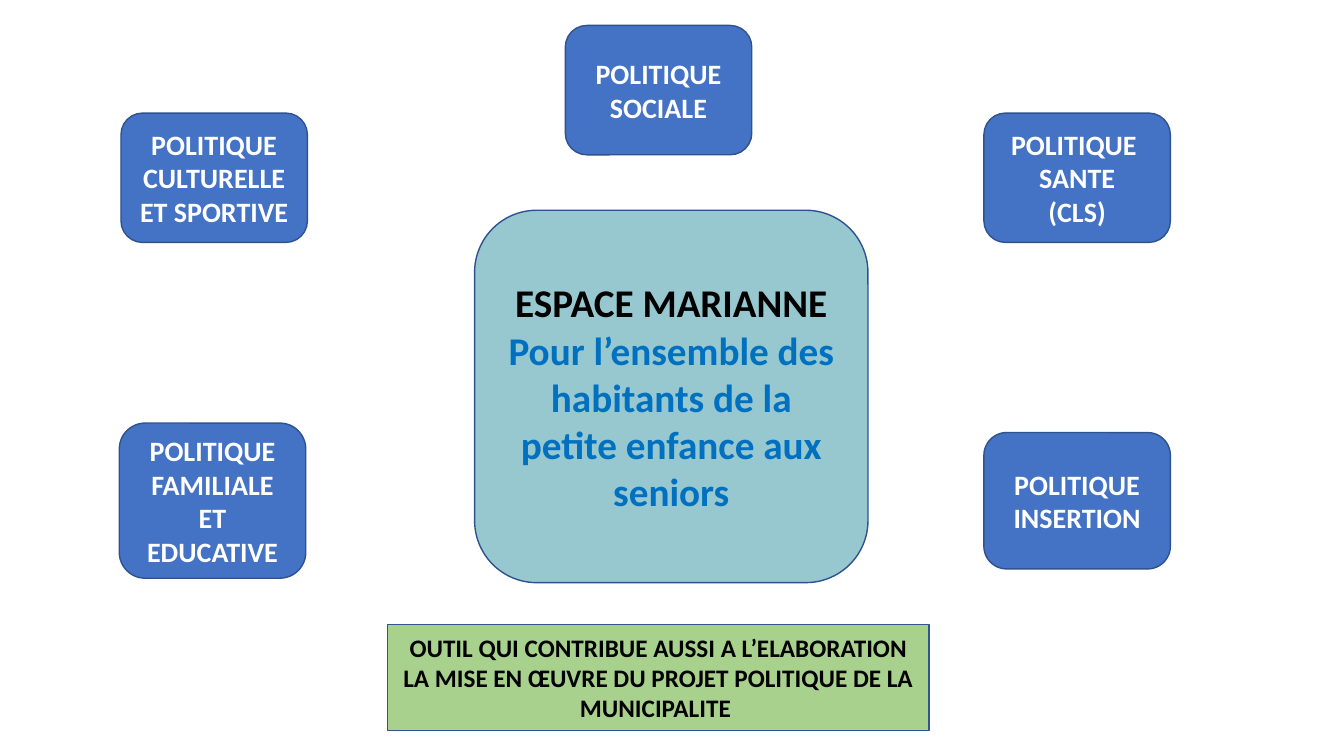
from dataclasses import dataclass

from pptx import Presentation
from pptx.dml.color import RGBColor
from pptx.enum.shapes import MSO_SHAPE
from pptx.enum.text import MSO_ANCHOR, PP_ALIGN
from pptx.shapes.autoshape import Shape
from pptx.slide import Slide
from pptx.util import Pt


@dataclass(frozen=True)
class Theme:
    font: str = "Calibri"
    blue: str = "4472C4"
    teal: str = "97C7CF"
    green: str = "A9D18E"
    edge: str = "2F528F"
    rim: str = "325491"
    white: str = "FFFFFF"
    black: str = "000000"
    accent: str = "0070C0"
    small: int = 18
    medium: int = 20
    large: int = 28


THEME = Theme()


@dataclass(frozen=True)
class Box:
    text: str
    left: float
    top: float
    width: float
    height: float
    fill: str = THEME.blue
    line: str = THEME.edge
    size: int = THEME.medium
    inks: tuple[str, ...] = (THEME.white,)  # per paragraph, last one repeats
    kind: MSO_SHAPE = MSO_SHAPE.ROUNDED_RECTANGLE


# Policy boxes: shared columns, width and usual height
WIDE, HIGH = 133.2, 92.4
LEFT, MID, RIGHT = 86.4, 403.8, 702.8
UPPER = 80.8

BOXES = (
    Box("POLITIQUE\nINSERTION", RIGHT, 309, WIDE, 97.4),
    Box("POLITIQUE\nCULTURELLE ET SPORTIVE", LEFT, UPPER, WIDE, HIGH),
    Box("POLITIQUE \nSANTE\n(CLS)", RIGHT, UPPER, WIDE, HIGH),
    Box("POLITIQUE FAMILIALE ET EDUCATIVE", 85.2, 302.2, WIDE, 110.8),
    Box("POLITIQUE\nSOCIALE", MID, 18.2, WIDE, HIGH),
    # Central hub
    Box("ESPACE MARIANNE\nPour l’ensemble des habitants de la petite enfance aux seniors",
        339, 150.2, 281, 266, fill=THEME.teal, size=THEME.large,
        inks=(THEME.black, THEME.accent)),
    # Bottom banner
    Box("OUTIL QUI CONTRIBUE AUSSI A L’ELABORATION LA MISE EN ŒUVRE "
        "DU PROJET POLITIQUE DE LA MUNICIPALITE ",
        276.8, 446.2, 386.8, 75.6, fill=THEME.green, line=THEME.rim,
        size=THEME.small, inks=(THEME.black,),
        kind=MSO_SHAPE.FLOWCHART_PROCESS),
)


def write(shape: Shape, box: Box) -> None:
    frame = shape.text_frame
    frame.word_wrap = True
    frame.vertical_anchor = MSO_ANCHOR.MIDDLE
    frame.text = box.text
    for pos, para in enumerate(frame.paragraphs):
        para.alignment = PP_ALIGN.CENTER
        ink = box.inks[min(pos, len(box.inks) - 1)]
        for run in para.runs:
            run.font.name = THEME.font
            run.font.size = Pt(box.size)
            run.font.bold = True
            run.font.color.rgb = RGBColor.from_string(ink)


def draw(slide: Slide, box: Box) -> None:
    shape = slide.shapes.add_shape(box.kind, Pt(box.left), Pt(box.top),
                                   Pt(box.width), Pt(box.height))
    shape.shadow.inherit = False
    shape.fill.solid()
    shape.fill.fore_color.rgb = RGBColor.from_string(box.fill)
    shape.line.color.rgb = RGBColor.from_string(box.line)
    shape.line.width = Pt(1)
    write(shape, box)


def main() -> None:
    deck = Presentation()
    deck.slide_width, deck.slide_height = Pt(960), Pt(540)
    slide = deck.slides.add_slide(deck.slide_layouts[6])
    for box in BOXES:
        draw(slide, box)
    deck.save("out.pptx")


if __name__ == "__main__":
    main()
